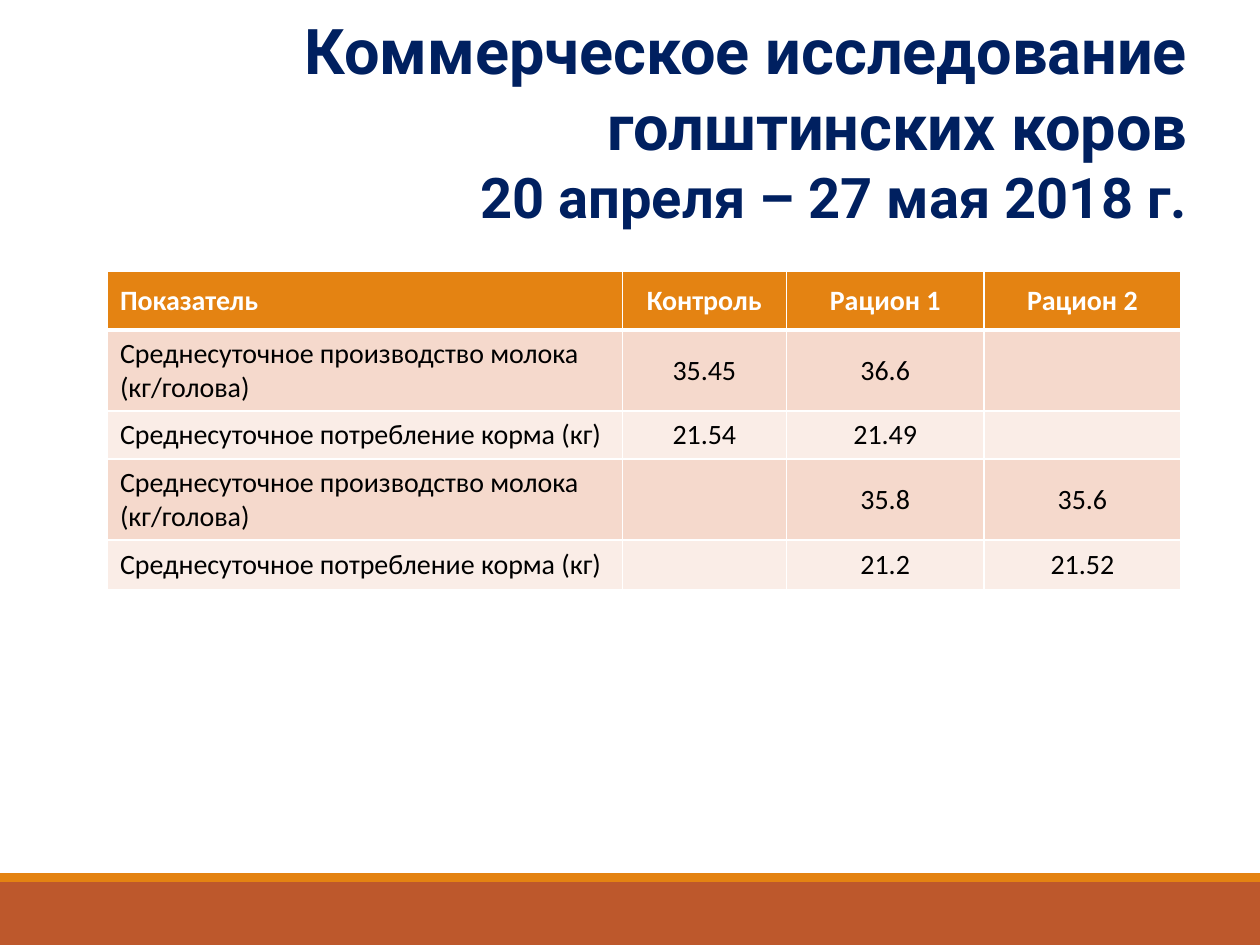
from lxml import etree
from pptx import Presentation
from pptx.dml.color import RGBColor
from pptx.enum.shapes import MSO_SHAPE
from pptx.enum.text import MSO_ANCHOR, PP_ALIGN
from pptx.oxml.ns import qn
from pptx.util import Pt

RECT = MSO_SHAPE.RECTANGLE
MIDDLE = MSO_ANCHOR.MIDDLE
LEFT, CENTER, RIGHT = PP_ALIGN.LEFT, PP_ALIGN.CENTER, PP_ALIGN.RIGHT

COLORS = {
    "navy": "002060", "orange": "E48312", "rust": "BD582C",
    "dark": "F5D9CC", "light": "FAEDE7", "white": "FFFFFF", "black": "000000",
}
MILK = "Среднесуточное производство молока (кг/голова)"
FEED = "Среднесуточное потребление корма (кг)"
ROWS = [
    ["Показатель", "Контроль", "Рацион 1", "Рацион 2"],
    [MILK, "35.45", "36.6", ""],
    [FEED, "21.54", "21.49", ""],
    [MILK, "", "35.8", "35.6"],
    [FEED, "", "21.2", "21.52"],
]
WIDTHS = [294.3, 93.6, 113.1, 112.3]
HEIGHTS = [33.8, 45.6, 26.4, 45.6, 28.4]


def color(name):
    return RGBColor.from_string(COLORS[name])


def write(para, text, size=16, font="Calibri", ink="black", bold=False, align=LEFT):
    para.alignment = align
    run = para.add_run()
    run.text = text
    run.font.size, run.font.name, run.font.bold = Pt(size), font, bold
    run.font.color.rgb = color(ink)


def add_bar(slide, top, height, fill):
    bar = slide.shapes.add_shape(RECT, 0, Pt(top), Pt(720), Pt(height))
    bar.shadow.inherit = False
    bar.fill.solid()
    bar.fill.fore_color.rgb = color(fill)
    bar.line.fill.background()


def add_title(slide):
    title = slide.shapes.title
    title.left, title.top, title.width, title.height = Pt(36), 0, Pt(650), Pt(138)
    frame = title.text_frame
    frame.word_wrap = True
    frame.vertical_anchor = MIDDLE
    look = {"font": "Roboto", "ink": "navy", "bold": True, "align": RIGHT}
    write(frame.paragraphs[0], "Коммерческое исследование голштинских коров", size=36, **look)
    write(frame.add_paragraph(), "20 апреля – 27 мая 2018 г.", size=32, **look)


def set_border(cell, side, width):
    props = cell._tc.get_or_add_tcPr()
    line = etree.SubElement(props, qn(f"a:ln{side}"), w=str(Pt(width)))
    fill = etree.SubElement(line, qn("a:solidFill"))
    etree.SubElement(fill, qn("a:srgbClr"), val=COLORS["white"])


def format_cell(cell, text, row, col):
    head = row == 0
    for side in "LRTB":
        edge = (side == "B" and head) or (side == "T" and row == 1)
        set_border(cell, side, 3 if edge else 1)
    cell.fill.solid()
    cell.fill.fore_color.rgb = color("orange" if head else "dark" if row % 2 else "light")
    cell.vertical_anchor = MIDDLE
    write(cell.text_frame.paragraphs[0], text, bold=head,
          ink="white" if head else "black", align=CENTER if col else LEFT)


def add_grid(slide):
    frame = slide.shapes.add_table(len(ROWS), len(WIDTHS), Pt(61.4), Pt(154.8),
                                   Pt(sum(WIDTHS)), Pt(sum(HEIGHTS)))
    table = frame.table
    for column, width in zip(table.columns, WIDTHS):
        column.width = Pt(width)
    for row, height in enumerate(HEIGHTS):
        table.rows[row].height = Pt(height)
        for col, text in enumerate(ROWS[row]):
            format_cell(table.cell(row, col), text, row, col)


def main():
    deck = Presentation()
    deck.slide_width, deck.slide_height = Pt(720), Pt(540)
    slide = deck.slides.add_slide(deck.slide_layouts[5])
    add_bar(slide, 504, 36, "rust")
    add_bar(slide, 499, 5, "orange")
    add_title(slide)
    add_grid(slide)
    deck.save("out.pptx")


if __name__ == "__main__":
    main()
